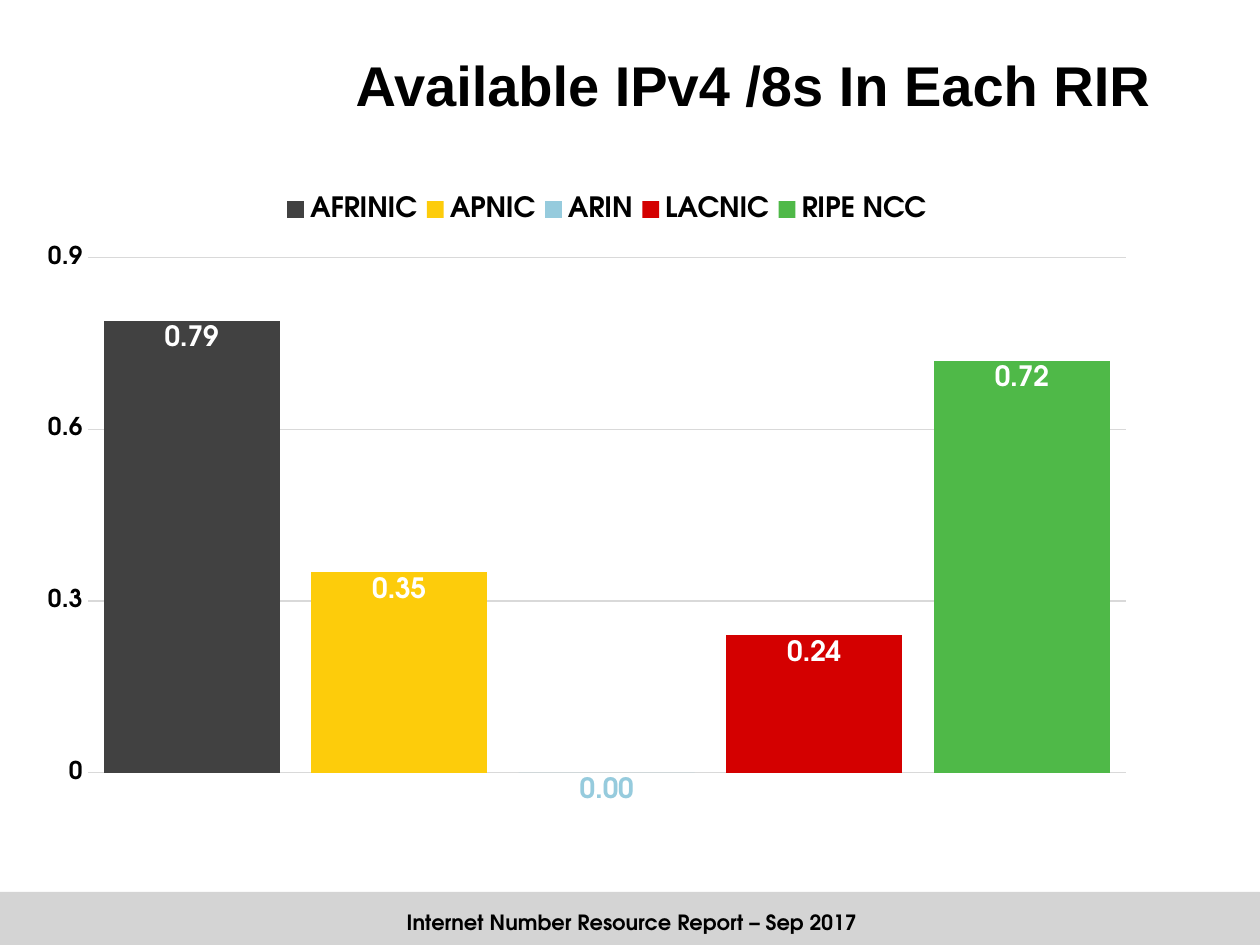
from lxml import etree
from pptx import Presentation
from pptx.chart.data import CategoryChartData
from pptx.dml.color import RGBColor
from pptx.enum.chart import XL_CHART_TYPE, XL_LABEL_POSITION, XL_LEGEND_POSITION, XL_TICK_MARK
from pptx.enum.shapes import MSO_SHAPE
from pptx.enum.text import MSO_ANCHOR, PP_ALIGN
from pptx.oxml.ns import qn
from pptx.util import Pt

COLUMN = XL_CHART_TYPE.COLUMN_CLUSTERED
INSIDE_END = XL_LABEL_POSITION.INSIDE_END
LEGEND_BOTTOM = XL_LEGEND_POSITION.BOTTOM
NO_TICK = XL_TICK_MARK.NONE
RECTANGLE = MSO_SHAPE.RECTANGLE
MIDDLE = MSO_ANCHOR.MIDDLE
CENTER = PP_ALIGN.CENTER

PX = 914400 / 126
TITLE_FONT = "Arial"
BODY_FONT = "TeX Gyre Adventor"
COLORS = {
    "black": "000000",
    "white": "FFFFFF",
    "band": "D4D4D4",
    "grid": "D9D9D9",
    "AFRINIC": "414141",
    "APNIC": "FDCC0B",
    "ARIN": "96CBDD",
    "LACNIC": "D40000",
    "RIPE NCC": "4FB948",
}
AVAILABLE = {"AFRINIC": 0.79, "APNIC": 0.35, "ARIN": 0, "LACNIC": 0.24, "RIPE NCC": 0.72}


def px(*lengths):
    return [round(length * PX) for length in lengths]


def color(name):
    return RGBColor.from_string(COLORS[name])


class SlideBuilder:
    def __init__(self, presentation):
        self.slide = presentation.slides.add_slide(presentation.slide_layouts[5])

    def style(self, font, size, color_name="black", name=BODY_FONT):
        font.name = name
        font.size = Pt(size)
        font.bold = True
        font.color.rgb = color(color_name)

    def add_run(self, shape, text, size, name=BODY_FONT):
        shape.text_frame.word_wrap = True
        paragraph = shape.text_frame.paragraphs[0]
        paragraph.alignment = CENTER
        run = paragraph.add_run()
        run.text = text
        self.style(run.font, size, name=name)

    def title(self, text, box):
        shape = self.slide.shapes.title
        shape.left, shape.top, shape.width, shape.height = px(*box)
        shape.text_frame.vertical_anchor = MIDDLE
        self.add_run(shape, text, 32, TITLE_FONT)

    def band(self, box):
        shape = self.slide.shapes.add_shape(RECTANGLE, *px(*box))
        shape.shadow.inherit = False
        shape.fill.solid()
        shape.fill.fore_color.rgb = color("band")
        shape.line.fill.background()

    def text(self, text, box):
        self.add_run(self.slide.shapes.add_textbox(*px(*box)), text, 12)

    def place(self, element, index, box, inner=False):
        """Give a chart part a manual layout, in fractions of the chart."""
        for old in element.findall(qn("c:layout")):
            element.remove(old)
        layout = etree.Element(qn("c:layout"))
        element.insert(index, layout)
        manual = etree.SubElement(layout, qn("c:manualLayout"))
        settings = [("layoutTarget", "inner")] if inner else []
        settings += [("xMode", "edge"), ("yMode", "edge"), *zip("xywh", box)]
        for tag, value in settings:
            etree.SubElement(manual, qn(f"c:{tag}")).set("val", str(value))

    def column_chart(self, values, box):
        data = CategoryChartData(number_format="0.00")
        data.categories = list(values)
        data.add_series("Series 1", list(values.values()))
        chart = self.slide.shapes.add_chart(COLUMN, *px(*box), data).chart
        self.style(chart.font, 10)
        chart.has_title = False

        # Axes
        chart.category_axis.visible = False
        axis = chart.value_axis
        axis.minimum_scale, axis.maximum_scale, axis.major_unit = 0, 0.9, 0.3
        axis.major_tick_mark = axis.minor_tick_mark = NO_TICK
        axis.format.line.fill.background()
        axis.major_gridlines.format.line.color.rgb = color("grid")
        axis.major_gridlines.format.line.width = Pt(0.75)
        axis.tick_labels.number_format = "General"
        axis.tick_labels.number_format_is_linked = False
        self.style(axis.tick_labels.font, 14)

        # Columns and their labels
        plot = chart.plots[0]
        plot.vary_by_categories = True
        plot.gap_width, plot.overlap = 18, -27
        series = plot.series[0]
        labels = series.data_labels
        labels.show_value = True
        labels.position = INSIDE_END
        labels.number_format = "0.00"
        labels.number_format_is_linked = False
        self.style(labels.font, 16, "white")
        for index, (registry, value) in enumerate(values.items()):
            point = series.points[index]
            point.format.fill.solid()
            point.format.fill.fore_color.rgb = color(registry)
            if value == 0:
                self.style(point.data_label.font, 16, registry)
                point.data_label.position = INSIDE_END

        # Legend above the plot
        chart.has_legend = True
        legend = chart.legend
        legend.position = LEGEND_BOTTOM
        legend.include_in_layout = False
        self.style(legend.font, 16)
        legend_element = chart.element.find(".//" + qn("c:legend"))
        self.place(legend_element, 1, (0.22, 0, 0.59, 0.06))
        plot_area = chart.element.find(".//" + qn("c:plotArea"))
        self.place(plot_area, 0, (0.05, 0.1, 0.93, 0.75), inner=True)


def main():
    presentation = Presentation()
    presentation.slide_width, presentation.slide_height = px(1260, 945)
    builder = SlideBuilder(presentation)

    # Title and chart
    builder.title("Available IPv4 /8s In Each RIR", (247, 0, 1013, 169))
    builder.column_chart(AVAILABLE, (32, 189, 1116, 687))

    # Footer
    builder.band((0, 892, 1260, 53))
    builder.text("Internet Number Resource Report – Sep 2017", (372, 903, 520, 32))

    presentation.save("out.pptx")


if __name__ == "__main__":
    main()
